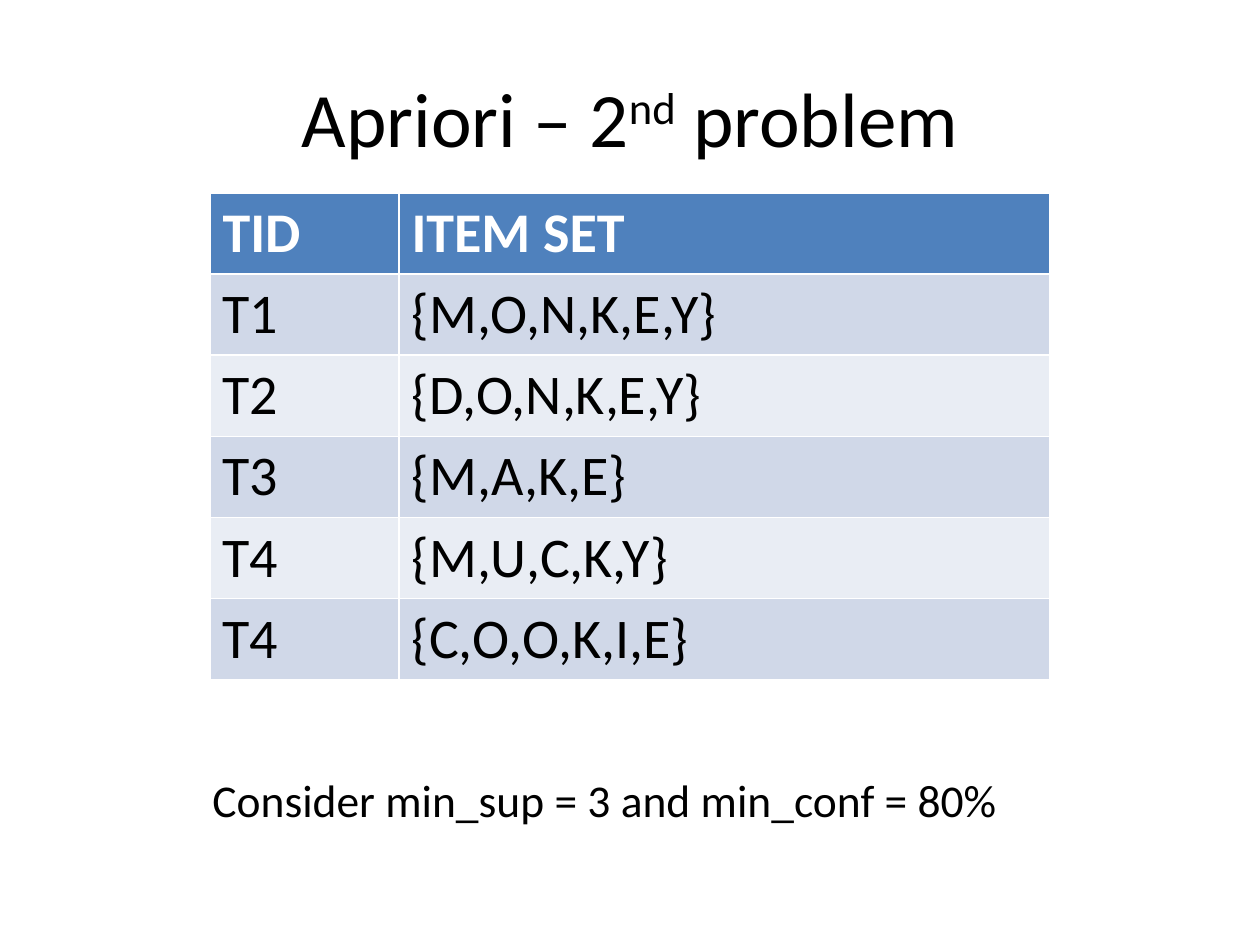
import pptx
import pptx.dml.color
import pptx.enum.text
import pptx.util

EMU_PER_PX = 914400 // 126
FONT = "Calibri"
BLACK = "000000"
WHITE = "FFFFFF"
HEADER_FILL = "4F81BD"
BAND_FILLS = ("D0D8E8", "E9EDF4")
TRANSACTIONS = [
    ("TID", "ITEM SET"),
    ("T1", "{M,O,N,K,E,Y}"),
    ("T2", "{D,O,N,K,E,Y}"),
    ("T3", "{M,A,K,E}"),
    ("T4", "{M,U,C,K,Y}"),
    ("T4", "{C,O,O,K,I,E}"),
]


def px(length):
    return pptx.util.Emu(length * EMU_PER_PX)


def color(hex_string):
    return pptx.dml.color.RGBColor.from_string(hex_string)


def format_font(paragraph, size, hex_string, bold=False):
    font = paragraph.font
    font.name = FONT
    font.size = pptx.util.Pt(size)
    font.bold = bold
    font.color.rgb = color(hex_string)


def add_title(slide, left, top, width, height):
    title = slide.shapes.title
    title.left, title.top = px(left), px(top)
    title.width, title.height = px(width), px(height)
    title.text_frame.vertical_anchor = pptx.enum.text.MSO_ANCHOR.MIDDLE
    paragraph = title.text_frame.paragraphs[0]
    paragraph.alignment = pptx.enum.text.PP_ALIGN.CENTER
    format_font(paragraph, 44, BLACK)
    for text, baseline in (("Apriori – 2", 0), ("nd", 30000), (" problem", 0)):
        run = paragraph.add_run()
        run.text = text
        if baseline:
            run.font._element.set("baseline", str(baseline))


def add_transaction_table(slide, left, top, column_widths, row_height):
    frame = slide.shapes.add_table(
        len(TRANSACTIONS), len(column_widths), px(left), px(top),
        px(sum(column_widths)), px(row_height * len(TRANSACTIONS)))
    table = frame.table
    for column, width in zip(table.columns, column_widths):
        column.width = px(width)
    for row_index, texts in enumerate(TRANSACTIONS):
        is_header = row_index == 0
        fill = HEADER_FILL if is_header else BAND_FILLS[(row_index - 1) % 2]
        for column_index, text in enumerate(texts):
            cell = table.cell(row_index, column_index)
            cell.text = text
            cell.fill.solid()
            cell.fill.fore_color.rgb = color(fill)
            format_font(cell.text_frame.paragraphs[0], 32,
                        WHITE if is_header else BLACK, is_header)


def add_note(slide, text, left, top, width, height):
    note = slide.shapes.add_textbox(px(left), px(top), px(width), px(height))
    note.text_frame.word_wrap = True
    paragraph = note.text_frame.paragraphs[0]
    paragraph.text = text
    format_font(paragraph, 26, BLACK)


def main():
    presentation = pptx.Presentation()
    presentation.slide_width = px(1260)
    presentation.slide_height = px(945)
    slide = presentation.slides.add_slide(presentation.slide_layouts[5])
    add_title(slide, 63, 38, 1134, 157)
    add_transaction_table(slide, 210, 193, (189, 651), 81)
    add_note(slide, "Consider min_sup = 3 and min_conf = 80%", 200, 766, 882, 68)
    presentation.save("out.pptx")


if __name__ == "__main__":
    main()
